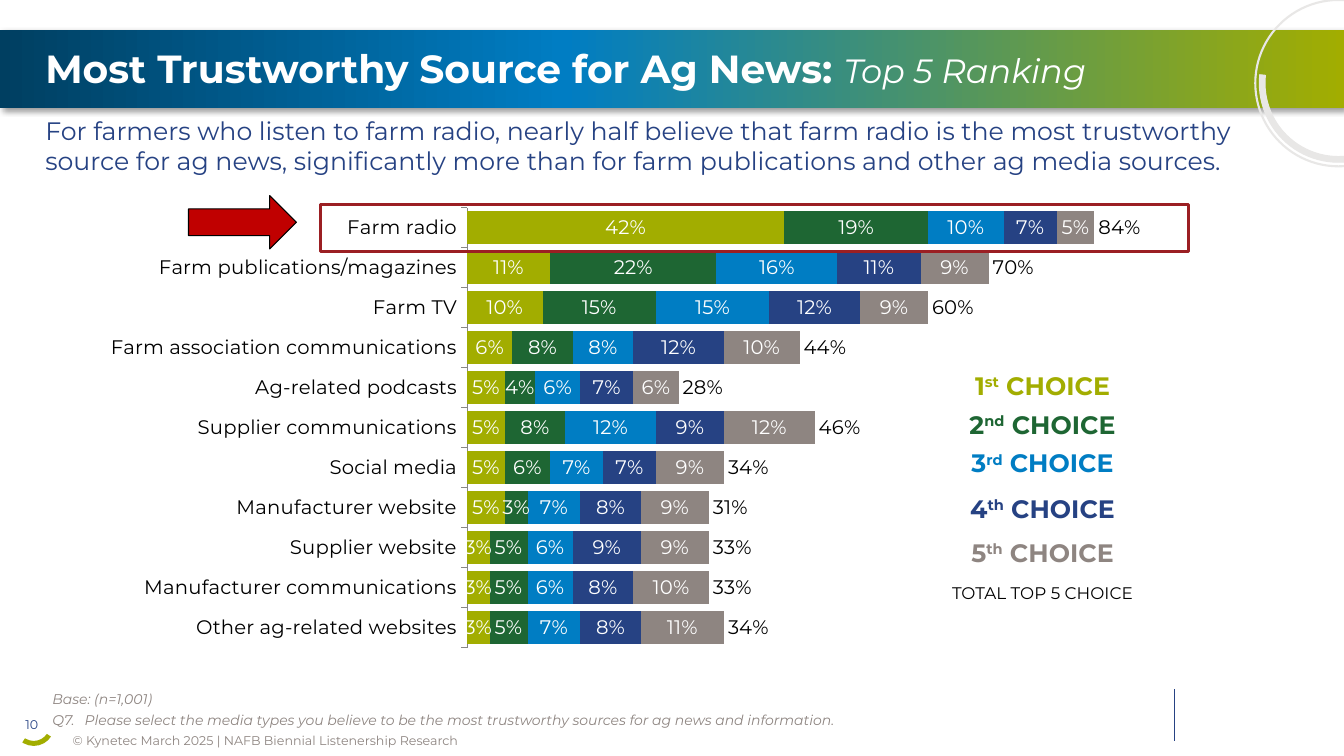
from copy import deepcopy

from lxml import etree
from pptx import Presentation, util as u
from pptx.chart import data as chart_data
from pptx.dml import color
from pptx.enum import chart as ch, shapes as sh, text as tx
from pptx.oxml import ns

FACE = "Montserrat"
LIME, GREEN, BLUE, NAVY, GREY = "A2AD00", "1E6633", "007DC3", "264283", "8E8581"
WHITE, BLACK, RING = "FFFFFF", "000000", "E8E7E6"
CHOICE_COLOURS = [LIME, GREEN, BLUE, NAVY, GREY]

# Shares by rank (1st to 5th choice), then the total
RANKING = {
    "Farm radio": (0.42, 0.19, 0.10, 0.07, 0.05, 0.84),
    "Farm publications/magazines": (0.11, 0.22, 0.16, 0.11, 0.09, 0.70),
    "Farm TV": (0.10, 0.15, 0.15, 0.12, 0.09, 0.60),
    "Farm association communications": (0.06, 0.08, 0.08, 0.12, 0.10, 0.44),
    "Ag-related podcasts": (0.05, 0.04, 0.06, 0.07, 0.06, 0.28),
    "Supplier communications": (0.05, 0.08, 0.12, 0.09, 0.12, 0.46),
    "Social media": (0.05, 0.06, 0.07, 0.07, 0.09, 0.34),
    "Manufacturer website": (0.05, 0.03, 0.07, 0.08, 0.09, 0.31),
    "Supplier website": (0.03, 0.05, 0.06, 0.09, 0.09, 0.33),
    "Manufacturer communications": (0.03, 0.05, 0.06, 0.08, 0.10, 0.33),
    "Other ag-related websites": (0.03, 0.05, 0.07, 0.08, 0.11, 0.34),
}


def rgb(value):
    return color.RGBColor.from_string(value)


def inches(box):
    return [u.Inches(length) for length in box]


def child(parent, tag, **attributes):
    element = etree.SubElement(parent, ns.qn(tag))
    for name, value in attributes.items():
        element.set(name, str(value))
    return element


def style(font, size, colour, bold=False, italic=False):
    font.name, font.size, font.bold, font.italic = FACE, u.Pt(size), bold, italic
    font.color.rgb = rgb(colour)


def add_span(para, words, size, colour, bold=False, italic=False, raised=False):
    span = para.add_run()
    span.text = words
    style(span.font, size, colour, bold, italic)
    if raised:
        span._r.get_or_add_rPr().set("baseline", "30000")


def set_frame(shape, margins=(0, 0, 0, 0), anchor=tx.MSO_ANCHOR.MIDDLE,
              align=tx.PP_ALIGN.LEFT, wrap=True):
    """Format the text frame and return its first paragraph."""
    frame = shape.text_frame
    frame.word_wrap, frame.auto_size = wrap, tx.MSO_AUTO_SIZE.NONE
    frame.vertical_anchor = anchor
    (frame.margin_left, frame.margin_top,
     frame.margin_right, frame.margin_bottom) = inches(margins)
    para = frame.paragraphs[0]
    para.alignment, para.space_before = align, u.Pt(0)
    return para


def place(shape, box):
    shape.left, shape.top, shape.width, shape.height = inches(box)


def add_shape(page, kind, box, fill=None, line=None, weight=0.75):
    shape = page.shapes.add_shape(kind, *inches(box))
    shape.shadow.inherit = False
    if fill:
        shape.fill.solid()
        shape.fill.fore_color.rgb = rgb(fill)
    else:
        shape.fill.background()
    if line:
        shape.line.color.rgb, shape.line.width = rgb(line), u.Pt(weight)
    else:
        shape.line.fill.background()
    return shape


def add_arc(page, box, start, end, thickness, fill, line=None):
    arc = add_shape(page, sh.MSO_SHAPE.BLOCK_ARC, box, fill, line)
    # Angles are stored in 60000ths of a degree, adjustments in 100000ths
    for i, value in enumerate((start * 0.6, end * 0.6, thickness)):
        arc.adjustments[i] = value
    return arc


def add_footer(page, left, top):
    # Divider
    divider = page.shapes.add_connector(
        sh.MSO_CONNECTOR.STRAIGHT, *inches((11.65, top, 11.65, top + 0.51)))
    divider.line.color.rgb, divider.line.width = rgb(NAVY), u.Pt(0.75)
    child(divider.element.spPr, "a:effectLst")

    # Page number with its arc
    add_arc(page, (left, top + 0.15, 0.41, 0.41), 33.45, 123.65, 0.12, LIME)
    number = page.shapes.add_textbox(*inches((left - 0.01, top + 0.15, 0.39, 0.39)))
    para = set_frame(number, align=tx.PP_ALIGN.CENTER, wrap=False)
    add_span(para, "10", 9, NAVY)

    # Copyright line
    strip = add_shape(page, sh.MSO_SHAPE.RECTANGLE,
                      (left + 0.59, top + 0.41, 9.21, 0.19), WHITE)
    add_span(set_frame(strip),
             "© Kynetec March 2025 | NAFB Biennial Listenership Research", 9, GREY)

    # Base and question
    note = page.shapes.add_textbox(*inches((left + 0.39, top + 0.01, 10.3, 0.38)))
    base = set_frame(note, anchor=tx.MSO_ANCHOR.TOP)
    question = note.text_frame.add_paragraph()
    question.space_before = u.Pt(3)
    tabs = child(question._p.get_or_add_pPr(), "a:tabLst")
    for stop in (0.32, 0.44):
        child(tabs, "a:tab", pos=u.Inches(stop), algn="l")
    add_span(base, "Base: (n=1,001)", 10, GREY, italic=True)
    add_span(question, "Q7.\tPlease select the media types you believe to be the most "
             "trustworthy sources for ag news and information.", 10, GREY, italic=True)


def add_summary(page, box):
    body = page.placeholders[1]
    place(body, box)
    para = set_frame(body, (0, 0.02, 0, 0))
    properties = para._p.get_or_add_pPr()
    properties.set("marL", "0")
    properties.set("indent", "0")
    child(properties, "a:buNone")
    add_span(para, "For farmers who listen to farm radio, nearly half believe that farm "
             "radio is the most trustworthy source for ag news, significantly more than "
             "for farm publications and other ag media sources.", 18, NAVY)


def add_ranking_chart(page, box):
    table = chart_data.CategoryChartData(number_format="0%")
    table.categories = list(RANKING)
    for i, values in enumerate(zip(*RANKING.values()), 1):
        table.add_series(f"Series {i}", values)
    chart = page.shapes.add_chart(
        ch.XL_CHART_TYPE.BAR_STACKED, *inches(box), table).chart
    chart.has_legend = chart.has_title = False
    style(chart.font, 18, BLACK)

    # Axes
    values = chart.value_axis
    values.minimum_scale, values.maximum_scale, values.major_unit = 0, 1, 0.1
    values.has_major_gridlines = values.visible = False
    sources = chart.category_axis
    sources.reverse_order = True
    sources.major_tick_mark = ch.XL_TICK_MARK.OUTSIDE
    sources.format.line.color.rgb = rgb("868686")
    sources.format.line.width = u.Pt(0.75)
    style(sources.tick_labels.font, 14, BLACK)

    # Bars and labels; the total has no fill, so only its label shows
    plot = chart.plots[0]
    plot.gap_width, plot.overlap, plot.vary_by_categories = 21, 100, False
    for series, colour in zip(plot.series, CHOICE_COLOURS + [None]):
        labels = series.data_labels
        labels.show_value = True
        labels.number_format, labels.number_format_is_linked = "0%", False
        style(labels.font, 14, WHITE if colour else BLACK)
        if colour:
            series.format.fill.solid()
            series.format.fill.fore_color.rgb = rgb(colour)
            labels.position = ch.XL_LABEL_POSITION.CENTER
        else:
            series.format.fill.background()
            labels.position = ch.XL_LABEL_POSITION.INSIDE_BASE

    # Fixed plot area
    area = chart.element.find(".//" + ns.qn("c:plotArea"))
    for old in area.findall(ns.qn("c:layout")):
        area.remove(old)
    layout = etree.Element(ns.qn("c:layout"))
    area.insert(0, layout)
    manual = child(layout, "c:manualLayout")
    for tag, value in (("layoutTarget", "inner"), ("xMode", "edge"), ("yMode", "edge"),
                       ("x", 0.432), ("y", 0.109), ("w", 0.562), ("h", 0.859)):
        child(manual, "c:" + tag, val=value)


def add_title_band(page, box):
    # Gradient band with a soft shadow
    band = add_shape(page, sh.MSO_SHAPE.RECTANGLE, box)
    band.fill.gradient()
    band.fill.gradient_angle = 0
    stops = band.element.find(".//" + ns.qn("a:gsLst"))
    stops.insert(1, deepcopy(stops[0]))
    for stop, (position, colour) in zip(
            band.fill.gradient_stops, ((0, "003F61"), (0.42, BLUE), (1, LIME))):
        stop.position, stop.color.rgb = position, rgb(colour)
    effects = band.element.spPr.find(ns.qn("a:effectLst"))
    shadow = child(effects, "a:outerShdw", blurRad=u.Pt(4), dist=u.Pt(3),
                   dir=45 * 60000, algn="tl", rotWithShape=0)
    child(child(shadow, "a:srgbClr", val=BLACK), "a:alpha", val=40000)

    # Title, brought in front of the band
    left, top, _, height = box
    title = page.shapes.title
    place(title, (left + 0.46, top - 0.02, 11.34, height + 0.02))
    title.element.getparent().append(title.element)
    para = set_frame(title)
    add_span(para, "Most Trustworthy Source for Ag News: ", 28, WHITE, bold=True)
    add_span(para, "Top 5 Ranking", 24, WHITE, italic=True)


def add_rings(page, left, top, size):
    add_shape(page, sh.MSO_SHAPE.OVAL, (left, top, size, size), line=RING, weight=1.5)
    inner = size - 0.08
    arc = add_arc(page, (left + 0.04, top + 0.04, inner, inner),
                  204.51, 96.09, 0.036, RING, RING)
    arc.rotation = 90


def add_choice_key(page, left, width):
    def add_line(top):
        label = page.shapes.add_textbox(*inches((left, top, width, 0.66)))
        return set_frame(label, (0.1, 0.05, 0.1, 0.05), align=tx.PP_ALIGN.CENTER)

    tops = (3.49, 3.88, 4.26, 4.71, 5.15)
    endings = ("st", "nd", "rd", "th", "th")
    for rank, (top, ending, colour) in enumerate(zip(tops, endings, CHOICE_COLOURS), 1):
        para = add_line(top)
        add_span(para, str(rank), 18, colour, bold=True)
        add_span(para, ending, 18, colour, bold=True, raised=True)
        add_span(para, " CHOICE", 18, colour, bold=True)
    add_span(add_line(5.55), "TOTAL TOP 5 CHOICE", 12, BLACK)


def add_highlight(page, box):
    add_shape(page, sh.MSO_SHAPE.RECTANGLE, box, line="9B1F23", weight=2.25)
    add_shape(page, sh.MSO_SHAPE.RIGHT_ARROW,
              (box[0] - 1.31, box[1] - 0.09, 1.07, 0.53), "C00000", BLACK)


def main():
    deck = Presentation()
    deck.slide_width, deck.slide_height = inches((13.33, 7.5))
    page = deck.slides.add_slide(deck.slide_layouts[1])
    add_footer(page, 0.13, 6.84)
    add_summary(page, (0.45, 1.27, 12.4, 0.32))
    add_ranking_chart(page, (-1.13, 1.51, 13.34, 5.08))
    add_title_band(page, (-0.01, 0.3, 13.34, 0.77))
    add_rings(page, 12.45, 0, 1.65)
    add_choice_key(page, 8.62, 3.44)
    add_highlight(page, (3.18, 2.03, 8.61, 0.47))
    deck.save("out.pptx")


if __name__ == "__main__":
    main()
